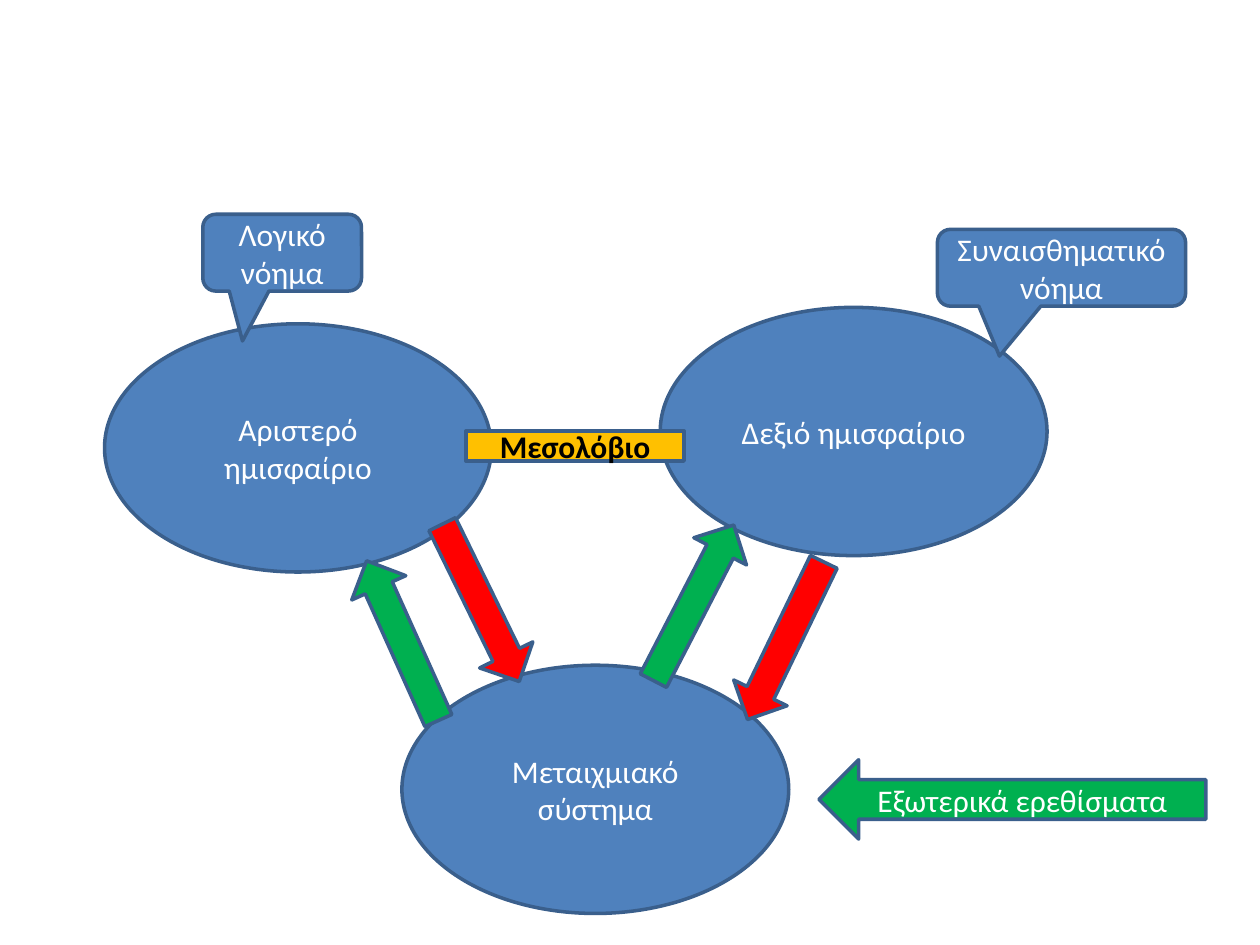
from pptx import Presentation
from pptx.dml.color import RGBColor
from pptx.enum.shapes import MSO_SHAPE
from pptx.enum.text import MSO_ANCHOR, PP_ALIGN
from pptx.util import Inches, Pt

WIDE, HIGH = Inches(10), Inches(7.5)
BLUE = RGBColor(0x4F, 0x81, 0xBD)
EDGE = RGBColor(0x3A, 0x5F, 0x8C)
GOLD = RGBColor(0xFF, 0xC0, 0x00)
GREEN = RGBColor(0x00, 0xB0, 0x50)
RED = RGBColor(0xFF, 0x00, 0x00)
WHITE = RGBColor(0xFF, 0xFF, 0xFF)
BLACK = RGBColor(0x00, 0x00, 0x00)


def across(share):
    return round(WIDE * share / 100)


def down(share):
    return round(HIGH * share / 100)


def add_form(slide, kind, x, y, w, h, fill):
    form = slide.shapes.add_shape(kind, across(x), down(y), across(w), down(h))
    form.shadow.inherit = False
    form.fill.solid()
    form.fill.fore_color.rgb = fill
    form.line.color.rgb = EDGE
    form.line.width = Pt(2)
    return form


def add_label(form, text, color=WHITE, bold=False):
    frame = form.text_frame
    frame.word_wrap = True
    frame.vertical_anchor = MSO_ANCHOR.MIDDLE
    frame.text = text
    line = frame.paragraphs[0]
    line.alignment = PP_ALIGN.CENTER
    line.font.name = "Calibri"
    line.font.size = Pt(18)
    line.font.bold = bold
    line.font.color.rgb = color


def add_oval(slide, x, y, text):
    oval = add_form(slide, MSO_SHAPE.OVAL, x, y, 30.7, 26.27, BLUE)
    add_label(oval, text)


def add_bridge(slide, text):
    bar = add_form(slide, MSO_SHAPE.RECTANGLE, 37, 45.6, 17.3, 3.2, GOLD)
    add_label(bar, text, BLACK, True)


def add_flow(slide, x, y, turn, fill):
    arrow = add_form(slide, MSO_SHAPE.UP_ARROW, x, y, 4.7, 18.53, fill)
    arrow.rotation = turn


def add_input(slide, text):
    arrow = add_form(slide, MSO_SHAPE.LEFT_ARROW, 65, 80.4, 30.7, 8.4, GREEN)
    add_label(arrow, text)


def add_callout(slide, x, y, w, text):
    kind = MSO_SHAPE.ROUNDED_RECTANGULAR_CALLOUT
    callout = add_form(slide, kind, x, y, w, 8.13, BLUE)
    for spot, value in enumerate((-0.25, 1.15, 0.17)):
        callout.adjustments[spot] = value
    add_label(callout, text)


def main():
    deck = Presentation()
    deck.slide_width, deck.slide_height = WIDE, HIGH
    slide = deck.slides.add_slide(deck.slide_layouts[6])

    for x, y, text in (
        (31.9, 70.4, "Μεταιχμιακό σύστημα"),
        (8.3, 34.27, "Αριστερό ημισφαίριο"),
        (52.4, 32.53, "Δεξιό ημισφαίριο"),
    ):
        add_oval(slide, x, y, text)

    add_bridge(slide, "Μεσολόβιο")

    for x, y, turn, fill in (
        (29.6, 58.53, 335.8, GREEN),
        (35.8, 54.53, 153.9, RED),
        (52.7, 54.53, 27.3, GREEN),
        (60, 58.53, 205.8, RED),
    ):
        add_flow(slide, x, y, turn, fill)

    add_input(slide, "Εξωτερικά ερεθίσματα")
    add_callout(slide, 16.1, 22.67, 12.6, "Λογικό νόημα")
    add_callout(slide, 74.4, 24.27, 19.7, "Συναισθηματικό νόημα")
    deck.save("out.pptx")


if __name__ == "__main__":
    main()
